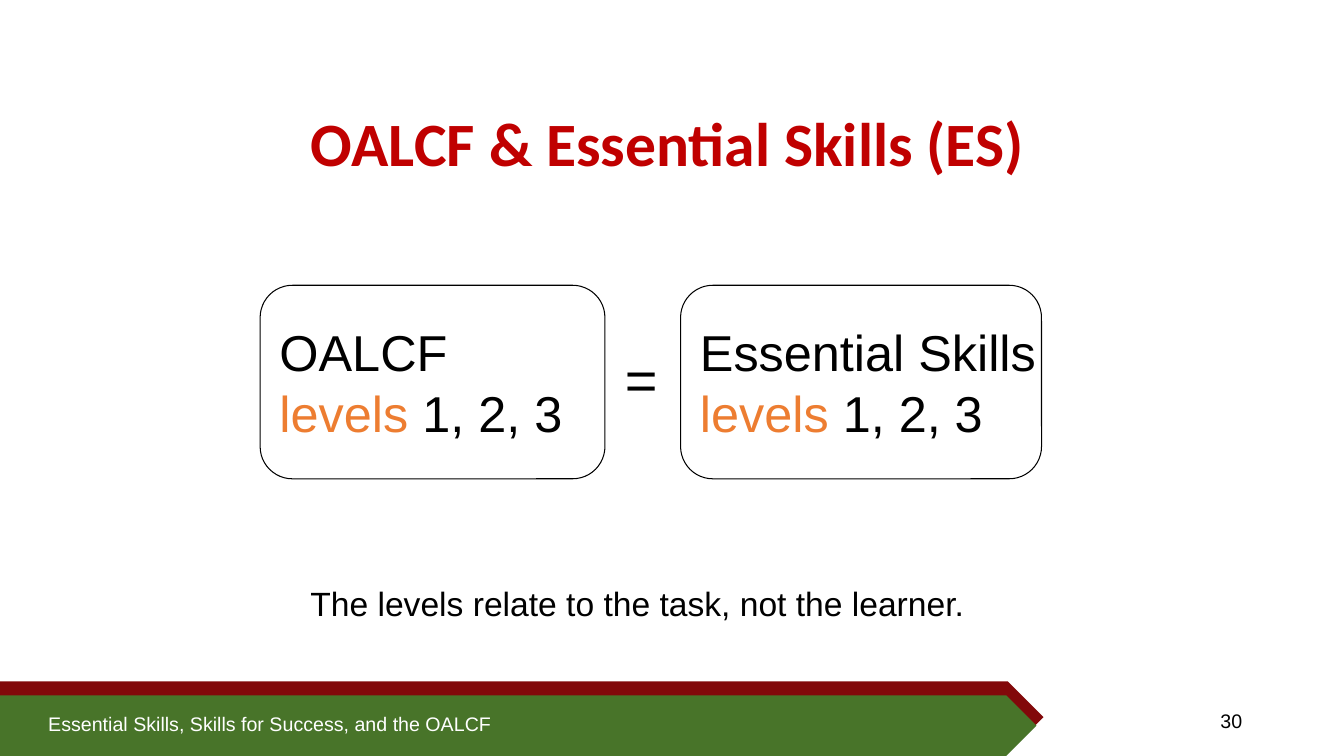
from pptx import Presentation
from pptx.dml.color import RGBColor
from pptx.enum.shapes import MSO_SHAPE
from pptx.enum.text import MSO_ANCHOR, PP_ALIGN
from pptx.util import Inches, Pt

COLORS = {
    "black": "000000",
    "white": "FFFFFF",
    "red": "C00000",
    "maroon": "82080A",
    "green": "487429",
    "orange": "ED7D31",
}


class Deck:
    def __init__(self):
        self.prs = Presentation()
        self.prs.slide_width = Inches(13.33)
        self.prs.slide_height = Inches(7.5)
        self.slide = self.prs.slides.add_slide(self.prs.slide_layouts[6])
        self.font = "Arial"

    def color(self, name):
        return RGBColor.from_string(COLORS[name])

    def fill_text(self, shape, lines, size, align=PP_ALIGN.LEFT, anchor=MSO_ANCHOR.MIDDLE,
                  font=None, bold=False, wrap=True, spacing=1.0):
        frame = shape.text_frame
        frame.word_wrap = wrap
        frame.vertical_anchor = anchor
        for index, line in enumerate(lines):
            para = frame.paragraphs[0] if index == 0 else frame.add_paragraph()
            para.alignment = align
            para.line_spacing = spacing
            for text, color in line:
                run = para.add_run()
                run.text = text
                run.font.name = font or self.font
                run.font.size = Pt(size)
                run.font.bold = bold
                run.font.color.rgb = self.color(color)

    def label(self, place, text, size, color="black", **style):
        box = self.slide.shapes.add_textbox(*map(Inches, place))
        self.fill_text(box, [[(text, color)]], size, **style)

    def shape(self, kind, place, adjust):
        shape = self.slide.shapes.add_shape(kind, *map(Inches, place))
        shape.shadow.inherit = False
        shape.adjustments[0] = adjust
        return shape

    def banner(self, place, color):
        arrow = self.shape(MSO_SHAPE.PENTAGON, place, 0.5)
        arrow.fill.solid()
        arrow.fill.fore_color.rgb = self.color(color)
        arrow.line.fill.background()

    def card(self, left, width, name):
        card = self.shape(MSO_SHAPE.ROUNDED_RECTANGLE, (left, 2.83, width, 1.92), 0.167)
        card.fill.background()
        card.line.color.rgb = self.color("black")
        card.line.width = Pt(0.75)
        levels = [("levels", "orange"), (" 1, 2, 3", "black")]
        self.fill_text(card, [[(name, "black")], levels], 36, wrap=False)


def main():
    deck = Deck()
    deck.banner((0, 6.76, 10.35, 0.71), "maroon")
    deck.banner((0, 6.9, 10.28, 0.6), "green")
    deck.label((0.38, 7.01, 9.27, 0.34), "Essential Skills, Skills for Success, and the OALCF",
               14, "white", anchor=MSO_ANCHOR.TOP)
    deck.label((1.06, 0.64, 11.13, 1.63), "OALCF & Essential Skills (ES)", 44, "red",
               align=PP_ALIGN.CENTER, font="Calibri", bold=True, spacing=0.9)
    deck.label((9.42, 6.95, 3, 0.4), "30", 14, align=PP_ALIGN.RIGHT)
    deck.card(2.58, 3.42, "OALCF")
    deck.card(6.75, 3.58, "Essential Skills")
    deck.label((6.1, 3.37, 0.53, 0.77), "=", 40, wrap=False)
    deck.label((2.98, 5.73, 7.55, 0.51), "The levels relate to the task, not the learner.",
               24, anchor=MSO_ANCHOR.TOP)
    deck.prs.save("out.pptx")


if __name__ == "__main__":
    main()
